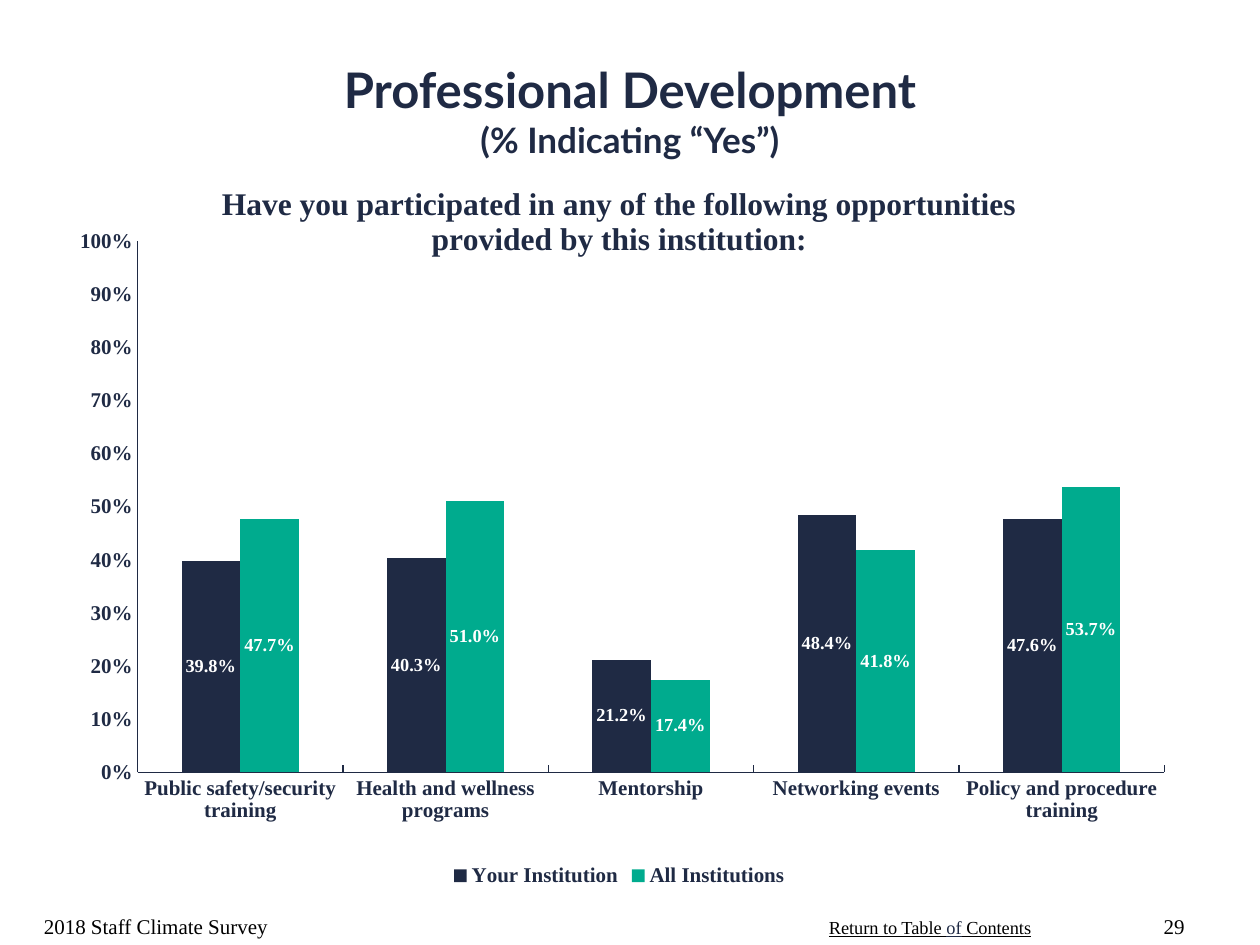
"""Build the Professional Development survey slide."""
from dataclasses import dataclass

from lxml import etree
from pptx import Presentation
from pptx import util as u
from pptx.chart.data import CategoryChartData
from pptx.dml.color import RGBColor
from pptx.enum import chart as kinds
from pptx.enum import text
from pptx.oxml.ns import qn

NAVY = RGBColor(0x1F, 0x2A, 0x44)
GREEN = RGBColor(0x00, 0xAB, 0x8E)
WHITE = RGBColor(0xFF, 0xFF, 0xFF)
BLACK = RGBColor(0x00, 0x00, 0x00)

CATEGORIES = [
    "Public safety/security training",
    "Health and wellness programs",
    "Mentorship",
    "Networking events",
    "Policy and procedure training",
]
SERIES = [
    ("Your Institution", NAVY, [0.398, 0.403, 0.212, 0.484, 0.476]),
    ("All Institutions", GREEN, [0.477, 0.51, 0.174, 0.418, 0.537]),
]
QUESTION = (
    "Have you participated in any of the following opportunities "
    "provided by this institution:"
)
PLOT_LAYOUT = {
    "layoutTarget": "inner", "xMode": "edge", "yMode": "edge",
    "x": 0.067, "y": 0.114, "w": 0.923, "h": 0.723,
}


@dataclass
class SurveySlide:
    slide: object
    heading_face: str = "Lato"
    body_face: str = "Times New Roman"

    def style(self, font, size, color=NAVY, bold=True, face=None):
        font.name = face or self.body_face
        font.size = u.Pt(size)
        font.bold = bold
        font.color.rgb = color

    def text_box(self, left, top, width, height, anchor, align=text.PP_ALIGN.LEFT, wrap=True):
        box = self.slide.shapes.add_textbox(*map(u.Inches, (left, top, width, height)))
        frame = box.text_frame
        frame.word_wrap = wrap
        frame.vertical_anchor = anchor
        para = frame.paragraphs[0]
        para.alignment = align
        return para

    def title(self, main, sub):
        para = self.text_box(0, 0.25, 10, 1.25, text.MSO_ANCHOR.MIDDLE, text.PP_ALIGN.CENTER)
        self.style(para.font, 28, face=self.heading_face)
        span = para.add_run()
        span.text = main
        span.font.size = u.Pt(28)
        para.add_line_break()
        span = para.add_run()
        span.text = sub
        span.font.size = u.Pt(20)

    def footer(self, words, left, width, align):
        para = self.text_box(left, 7, width, 0.5, text.MSO_ANCHOR.BOTTOM, align)
        para.text = words
        self.style(para.font, 12, BLACK, bold=False)

    def contents_label(self, spans):
        para = self.text_box(6.48, 7.22, 1.82, 0.28, text.MSO_ANCHOR.TOP, wrap=False)
        self.style(para.font, 10.5, BLACK, bold=False)
        para.font.underline = True
        for words, color in spans:
            span = para.add_run()
            span.text = words
            span.font.color.rgb = color

    def axis(self, axis, tick):
        axis.has_major_gridlines = False
        axis.major_tick_mark = tick
        axis.format.line.color.rgb = NAVY
        axis.format.line.width = u.Pt(0.75)
        self.style(axis.tick_labels.font, 12)

    def place_plot(self, plot):
        area = plot._element.getparent()
        for old in area.findall(qn("c:layout")):
            area.remove(old)
        layout = etree.Element(qn("c:layout"))
        manual = etree.SubElement(layout, qn("c:manualLayout"))
        for name, value in PLOT_LAYOUT.items():
            etree.SubElement(manual, qn(f"c:{name}")).set("val", str(value))
        area.insert(0, layout)

    def column_chart(self):
        data = CategoryChartData(number_format="0.0%")
        data.categories = CATEGORIES
        for name, _, values in SERIES:
            data.add_series(name, values)
        place = map(u.Inches, (0.5, 1.25, 8.83, 5.83))
        chart = self.slide.shapes.add_chart(
            kinds.XL_CHART_TYPE.COLUMN_CLUSTERED, *place, data
        ).chart
        self.style(chart.font, 10)

        para = chart.chart_title.text_frame.paragraphs[0]
        para.text = QUESTION
        self.style(para.font, 18)
        chart.has_legend = True
        chart.legend.position = kinds.XL_LEGEND_POSITION.BOTTOM
        chart.legend.include_in_layout = False
        self.style(chart.legend.font, 12)

        self.axis(chart.category_axis, kinds.XL_TICK_MARK.INSIDE)
        values_axis = chart.value_axis
        self.axis(values_axis, kinds.XL_TICK_MARK.NONE)
        values_axis.minimum_scale, values_axis.maximum_scale = 0, 1
        values_axis.major_unit = 0.1
        values_axis.tick_labels.number_format = "0%"
        values_axis.tick_labels.number_format_is_linked = False

        plot = chart.plots[0]
        plot.gap_width, plot.overlap = 150, 0
        plot.vary_by_categories = False
        for series, (_, color, _) in zip(plot.series, SERIES):
            series.format.fill.solid()
            series.format.fill.fore_color.rgb = color
            labels = series.data_labels
            labels.show_value = True
            labels.position = kinds.XL_LABEL_POSITION.CENTER
            labels.number_format = "0.0%"
            labels.number_format_is_linked = False
            self.style(labels.font, 10.5, WHITE)
        self.place_plot(plot)


def main():
    deck = Presentation()
    deck.slide_width, deck.slide_height = u.Inches(10), u.Inches(7.5)
    page = SurveySlide(deck.slides.add_slide(deck.slide_layouts[6]))
    page.contents_label([("Return to Table ", BLACK), ("of", NAVY), (" Contents", BLACK)])
    page.title("Professional Development", "(% Indicating “Yes”)")
    page.column_chart()
    page.footer("2018 Staff Climate Survey", 0.25, 3.17, text.PP_ALIGN.LEFT)
    page.footer("29", 9, 0.5, text.PP_ALIGN.RIGHT)
    deck.save("out.pptx")


if __name__ == "__main__":
    main()
